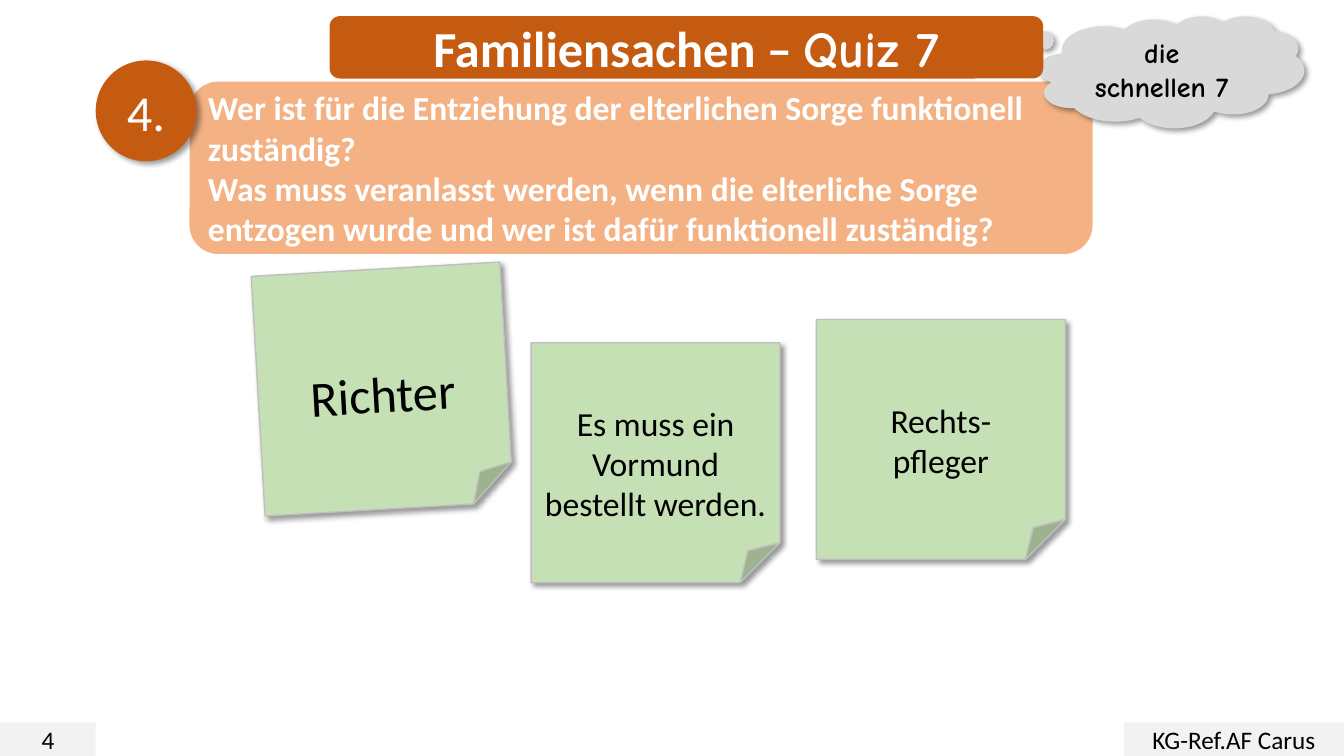
from lxml import etree
from pptx import Presentation
from pptx.dml.color import RGBColor
from pptx.enum.shapes import MSO_SHAPE
from pptx.enum.text import MSO_ANCHOR, PP_ALIGN
from pptx.oxml.ns import qn
from pptx.util import Pt

RECT, ROUNDED, CIRCLE = MSO_SHAPE.RECTANGLE, MSO_SHAPE.ROUNDED_RECTANGLE, MSO_SHAPE.OVAL
STICKY, CLOUD = MSO_SHAPE.FOLDED_CORNER, MSO_SHAPE.CLOUD_CALLOUT
LEFT, CENTER, MIDDLE = PP_ALIGN.LEFT, PP_ALIGN.CENTER, MSO_ANCHOR.MIDDLE

COLORS = {
    "black": "000000", "white": "FFFFFF", "footer": "F2F2F2", "cloud": "D9D9D9",
    "accent": "C55A11", "question": "F4B183", "note": "C5E0B4", "note_edge": "BFBFBF",
}
BODY_FONT, COMIC_FONT = "Calibri", "Comic Neue"
NOTE_SIZE = (177.8, 171.4)


def color(name):
    return RGBColor.from_string(COLORS[name])


class QuizSlide:
    def __init__(self, deck):
        self.slide = deck.slides.add_slide(deck.slide_layouts[6])

    def shape(self, kind, box, fill, edge=None, shadow=False):
        shape = self.slide.shapes.add_shape(kind, *(Pt(length) for length in box))
        shape.shadow.inherit = False
        shape.fill.solid()
        shape.fill.fore_color.rgb = color(fill)
        if edge:
            shape.line.color.rgb = color(edge)
            shape.line.width = Pt(1)
        else:
            shape.line.fill.background()
        if shadow:
            self.drop_shadow(shape)
        return shape

    def drop_shadow(self, shape):
        effects = shape._element.spPr.find(qn("a:effectLst"))
        outer = etree.SubElement(effects, qn("a:outerShdw"), blurRad=str(Pt(4)),
                                 dist=str(Pt(3)), dir="2700000", algn="tl", rotWithShape="0")
        tint = etree.SubElement(outer, qn("a:srgbClr"), val=COLORS["black"])
        etree.SubElement(tint, qn("a:alpha"), val="40000")

    def text(self, shape, paragraphs, size, ink="black", align=CENTER, bold=False):
        """Write paragraphs, each a list of (wording, font name) runs."""
        frame = shape.text_frame
        frame.word_wrap = True
        frame.vertical_anchor = MIDDLE
        for index, runs in enumerate(paragraphs):
            paragraph = frame.add_paragraph() if index else frame.paragraphs[0]
            paragraph.alignment = align
            for wording, font_name in runs:
                run = paragraph.add_run()
                run.text = wording
                run.font.color.rgb = color(ink)
                style = {"name": font_name, "size": Pt(size), "bold": bold}
                for attribute, value in style.items():
                    setattr(run.font, attribute, value)

    def footer(self, left, width, wording):
        panel = self.shape(RECT, (left, 516, width, 24), "footer")
        self.text(panel, [[(wording, BODY_FONT)]], 18)

    def question(self, number, sentences):
        panel = self.shape(ROUNDED, (135.4, 58.3, 645, 123.1), "question")
        self.text(panel, [[(sentence, BODY_FONT)] for sentence in sentences],
                  24, "white", LEFT, True)
        badge = self.shape(CIRCLE, (68.4, 43.2, 72, 72), "accent", shadow=True)
        self.text(badge, [[(number, BODY_FONT)]], 36, "white")

    def sticky_note(self, left, top, lines, size=24, drop=29, rotation=0):
        """Add an answer note whose text sits lower by half of drop."""
        note = self.shape(STICKY, (left, top, *NOTE_SIZE), "note", "note_edge", True)
        note.rotation = rotation
        note.text_frame.margin_top = Pt(3.6 + drop)
        self.text(note, [[(line, BODY_FONT)] for line in lines], size)

    def cloud(self, wording):
        cloud = self.shape(CLOUD, (741.6, 11.5, 190.1, 79.9), "cloud", shadow=True)
        cloud.adjustments[0], cloud.adjustments[1] = -0.59, -0.35
        self.text(cloud, [[(wording, COMIC_FONT)]], 20, bold=True)

    def title(self, runs):
        banner = self.shape(ROUNDED, (235.4, 11.5, 509.8, 44.6), "accent")
        self.text(banner, [runs], 36, "white", bold=True)


def main():
    deck = Presentation()
    deck.slide_width, deck.slide_height = Pt(960), Pt(540)
    quiz = QuizSlide(deck)
    quiz.footer(0, 68.4, "4")
    quiz.footer(802.8, 157.2, "KG-Ref.AF Carus")
    quiz.question("4.", [
        "Wer ist für die Entziehung der elterlichen Sorge funktionell zuständig?",
        "Was muss veranlasst werden, wenn die elterliche Sorge entzogen wurde "
        "und wer ist dafür funktionell zuständig?",
    ])
    quiz.sticky_note(184.3, 192.2, ["Richter"], size=36, drop=34, rotation=356.7)
    quiz.cloud("die schnellen 7")
    quiz.sticky_note(379.4, 244.8, ["Es muss ein Vormund bestellt werden."])
    quiz.sticky_note(583.2, 228.2, ["Rechts-", "pfleger"])
    quiz.title([("Familiensachen – ", BODY_FONT), ("Quiz 7", COMIC_FONT)])
    deck.save("out.pptx")


if __name__ == "__main__":
    main()
